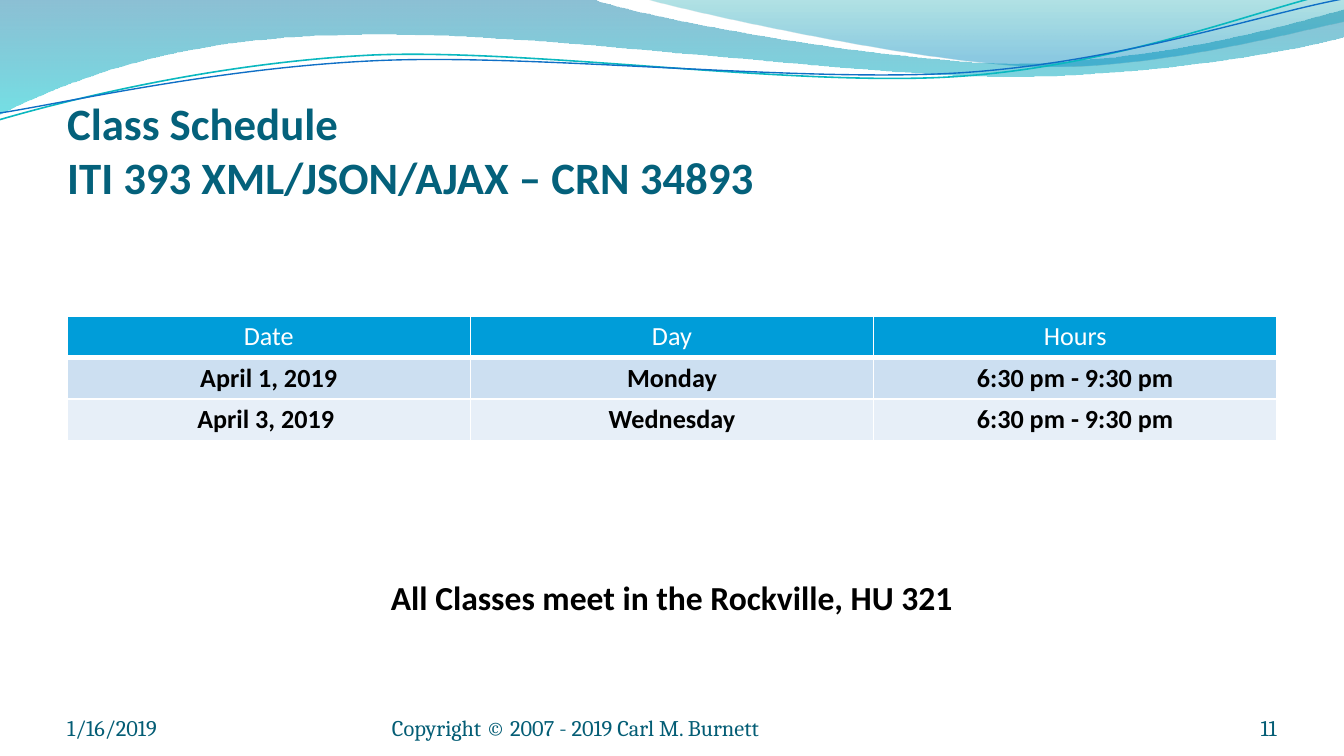
"""Build the class schedule slide with its wave header and dates table."""
from dataclasses import dataclass
from math import cos, radians, sin
from typing import Optional

from lxml.etree import SubElement
from pptx import Presentation
from pptx.dml.color import RGBColor
from pptx.enum.text import MSO_ANCHOR, PP_ALIGN
from pptx.oxml.ns import qn
from pptx.util import Pt

Point = tuple[float, float]


@dataclass(frozen=True)
class Theme:
    heading: str = "04617B"
    footer: str = "045D75"
    ink: str = "000000"
    white: str = "FFFFFF"
    table_header: str = "009DD9"
    table_bands: tuple[str, str] = ("CCDFF1", "E7EFF8")
    body_font: str = "Calibri"
    footer_font: str = "Cambria"
    title_size: float = 24
    note_size: float = 18
    table_size: float = 14
    footer_size: float = 12


@dataclass(frozen=True)
class Stop:
    position: float
    color: str
    opacity: int


@dataclass(frozen=True)
class Wave:
    start: Point
    segments: tuple[tuple[Point, ...], ...]
    stops: tuple[Stop, ...] = ()
    line_color: Optional[str] = None
    line_width: float = 0
    rotation: float = 0
    pivot: Point = (0, 0)


@dataclass(frozen=True)
class Label:
    text: str
    box: tuple[float, float, float, float]
    size: float
    font: str
    color: str
    bold: bool = False
    align: PP_ALIGN = PP_ALIGN.LEFT
    anchor: MSO_ANCHOR = MSO_ANCHOR.BOTTOM
    wrap: bool = True
    margins: tuple[float, float, float, float] = (0, 0, 0, 0)


THEME = Theme()

WAVES = (
    Wave((0, 0), (
        ((316.8, -0.7),),
        ((342.7, 9.4), (478.1, 33.8), (545.8, 33.8)),
        ((614.2, 33.8), (689.8, 13.7), (720, 5)),
        ((720.7, 19.4),),
        ((707.8, 23.8), (626.4, 41), (537.1, 41)),
        ((447.8, 40.3), (275, 15.1), (185, 18.7)),
        ((92.9, 19.4), (33.1, 44.6), (-0.7, 61.2)),
    ), stops=(Stop(0, "0074A1", 45), Stop(1, "00C6CF", 55))),
    Wave((344.9, -0.7), (
        ((366.5, 5.8), (491, 33.1), (553.7, 35.3)),
        ((616.3, 37.4), (691.9, 17.3), (720, 11.5)),
        ((720, 0),),
    ), stops=(Stop(0, "00A1A9", 30), Stop(0.8, "008BBF", 45))),
    Wave((0, 64.1), (
        ((34.6, 54), (113.8, 33.8), (199.4, 29.5)),
        ((285.1, 25.9), (426.2, 46.8), (512.6, 41)),
        ((599.8, 35.3), (676.1, 4.3), (718.6, -5)),
    ), line_color="0AB8BF", line_width=0.85, rotation=357.3, pivot=(359.3, 31.3)),
    Wave((0, 60.5), (
        ((33.8, 55.4), (118.1, 36), (203.8, 32.4)),
        ((290.2, 28.8), (429.8, 44.6), (516.2, 38.9)),
        ((601.9, 33.1), (676.8, 7.2), (720, -0.7)),
    ), line_color="0F6FC6", line_width=0.75, rotation=357.3, pivot=(359.6, 32)),
)

FOOTER = {"size": THEME.footer_size, "font": THEME.footer_font, "color": THEME.footer}

LABELS = (
    Label("Class Schedule\nITI 393 XML/JSON/AJAX – CRN 34893", (36, 41.4, 648, 67.5),
          THEME.title_size, THEME.body_font, THEME.heading, bold=True, margins=(0, 3.6, 0, 0)),
    Label("1/16/2019", (36, 375.4, 168, 21.6), **FOOTER),
    Label("Copyright © 2007 - 2019 Carl M. Burnett", (210, 375.4, 264, 21.6), **FOOTER),
    Label("11", (624, 375.4, 60, 21.6), align=PP_ALIGN.RIGHT, **FOOTER),
    Label("All Classes meet in the Rockville, HU 321", (200.9, 305.6, 318.2, 29),
          THEME.note_size, THEME.body_font, THEME.ink, bold=True, align=PP_ALIGN.CENTER,
          anchor=MSO_ANCHOR.TOP, wrap=False, margins=(7.2, 3.6, 7.2, 3.6)),
)

SCHEDULE = (
    ("Date", "Day", "Hours"),
    ("April 1, 2019", "Monday", "6:30 pm - 9:30 pm"),
    ("April 3, 2019 ", "Wednesday", "6:30 pm - 9:30 pm"),
)


def write_text(text_frame, text: str, *, size: float, font: str, color: str,
               bold: bool = False, align: PP_ALIGN = PP_ALIGN.LEFT) -> None:
    paragraph = text_frame.paragraphs[0]
    paragraph.text = text
    paragraph.alignment = align
    for run in paragraph.runs:
        run.font.size = Pt(size)
        run.font.name = font
        run.font.bold = bold
        run.font.color.rgb = RGBColor.from_string(color)


def turn(point: Point, pivot: Point, degrees: float) -> Point:
    angle = radians(degrees)
    x, y = point[0] - pivot[0], point[1] - pivot[1]
    return (pivot[0] + x * cos(angle) - y * sin(angle),
            pivot[1] + x * sin(angle) + y * cos(angle))


def bend_segments(shape, segments: tuple[tuple[Point, ...], ...]) -> None:
    outline = next(shape.element.iter(qn("a:path")))
    lines = iter(outline.findall(qn("a:lnTo")))
    for controls in segments:
        group = [next(lines) for _ in controls]
        if len(group) == 3:
            curve = outline.makeelement(qn("a:cubicBezTo"), {})
            group[0].addprevious(curve)
            for line in group:
                curve.append(line[0])
                outline.remove(line)


def draw_wave(slide, wave: Wave) -> None:
    points = [wave.start, *(point for controls in wave.segments for point in controls)]
    level = [turn(point, wave.pivot, -wave.rotation) for point in points]
    vertices = [(Pt(x), Pt(y)) for x, y in level]
    builder = slide.shapes.build_freeform(*vertices[0])
    builder.add_line_segments(vertices[1:], close=bool(wave.stops))
    shape = builder.convert_to_shape()
    bend_segments(shape, wave.segments)
    shape.rotation = wave.rotation
    shape.shadow.inherit = False
    if wave.line_color:
        shape.fill.background()
        shape.line.color.rgb = RGBColor.from_string(wave.line_color)
        shape.line.width = Pt(wave.line_width)
        return
    shape.line.fill.background()
    shape.fill.gradient()
    shape.fill.gradient_angle = 270
    for gradient_stop, stop in zip(shape.fill.gradient_stops, wave.stops):
        gradient_stop.position = stop.position
        gradient_stop.color.rgb = RGBColor.from_string(stop.color)
    for color, stop in zip(shape.element.spPr.iter(qn("a:srgbClr")), wave.stops):
        SubElement(color, qn("a:alpha"), val=str(stop.opacity * 1000))


def draw_label(slide, label: Label) -> None:
    text_frame = slide.shapes.add_textbox(*map(Pt, label.box)).text_frame
    text_frame.word_wrap = label.wrap
    text_frame.vertical_anchor = label.anchor
    (text_frame.margin_left, text_frame.margin_top,
     text_frame.margin_right, text_frame.margin_bottom) = map(Pt, label.margins)
    write_text(text_frame, label.text, size=label.size, font=label.font, color=label.color,
               bold=label.bold, align=label.align)


def set_borders(cell, widths: dict[str, float], color: str) -> None:
    properties = cell._tc.get_or_add_tcPr()
    for index, (side, width) in enumerate(widths.items()):
        line = properties.makeelement(qn(f"a:ln{side}"), {"w": str(Pt(width))})
        fill = SubElement(line, qn("a:solidFill"))
        SubElement(fill, qn("a:srgbClr"), val=color)
        properties.insert(index, line)


def draw_schedule(slide) -> None:
    frame = slide.shapes.add_table(len(SCHEDULE), len(SCHEDULE[0]),
                                   Pt(36), Pt(169.2), Pt(648), Pt(66.9))
    for row_index, texts in enumerate(SCHEDULE):
        is_header = row_index == 0
        fill = THEME.table_header if is_header else THEME.table_bands[(row_index - 1) % 2]
        for column_index, text in enumerate(texts):
            cell = frame.table.cell(row_index, column_index)
            cell.margin_left = cell.margin_right = Pt(6.6)
            cell.margin_top = cell.margin_bottom = Pt(2.6)
            cell.fill.solid()
            cell.fill.fore_color.rgb = RGBColor.from_string(fill)
            set_borders(cell, {"L": 1, "R": 1, "T": 1, "B": 3 if is_header else 1}, THEME.white)
            write_text(cell.text_frame, text, size=THEME.table_size, font=THEME.body_font,
                       color=THEME.white if is_header else THEME.ink,
                       bold=not is_header, align=PP_ALIGN.CENTER)


def main() -> None:
    presentation = Presentation()
    presentation.slide_width, presentation.slide_height = Pt(720), Pt(405)
    slide = presentation.slides.add_slide(presentation.slide_layouts[6])
    for wave in WAVES:
        draw_wave(slide, wave)
    draw_schedule(slide)
    for label in LABELS:
        draw_label(slide, label)
    presentation.save("out.pptx")


if __name__ == "__main__":
    main()
